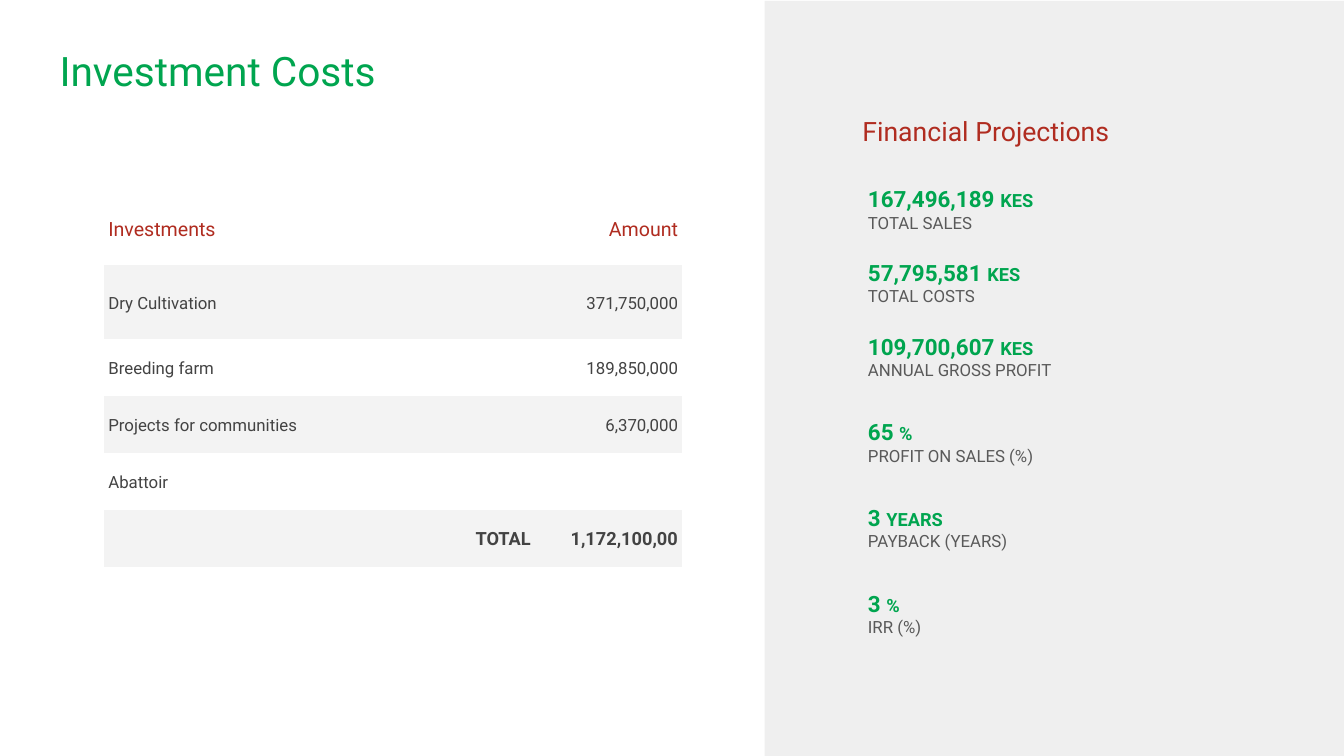
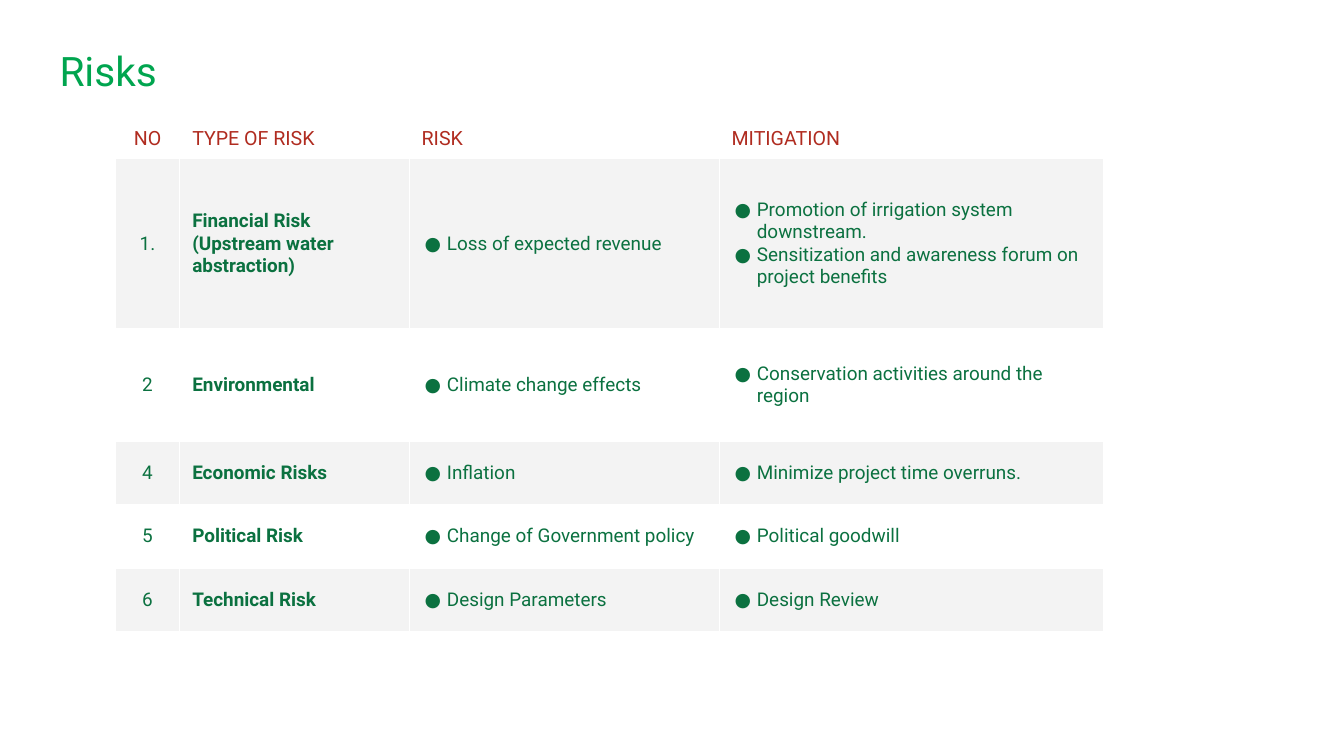
from lxml.etree import SubElement
from pptx import Presentation
from pptx.dml.color import RGBColor
from pptx.enum.shapes import MSO_SHAPE as Preset
from pptx.enum.text import MSO_ANCHOR as Anchor, MSO_AUTO_SIZE as AutoSize, PP_ALIGN as Align
from pptx.oxml.ns import qn
from pptx.util import Cm, Pt

FONT = "Roboto"
GREEN = RGBColor(0x00, 0xA5, 0x4F)
DARK_GREEN = RGBColor(0x0B, 0x71, 0x40)
RED = RGBColor(0xB0, 0x2C, 0x20)
INK = RGBColor(0x43, 0x43, 0x43)
CAPTION = RGBColor(0x59, 0x59, 0x59)
PANEL = RGBColor(0x9E, 0x9E, 0x9E)
BAND = RGBColor(0xF3, 0xF3, 0xF3)
WHITE = RGBColor(0xFF, 0xFF, 0xFF)

PLAIN_TABLE = "{2D5ABB26-0587-4C30-8999-92F81FD0307C}"
TITLE_ONLY = 5


class Deck:
    """Holds the shared style and the slide being built."""

    def __init__(self):
        self.prs = Presentation()
        self.prs.slide_width, self.prs.slide_height = Cm(67.73), Cm(38.1)
        self.slide = None

    def new_slide(self, heading):
        self.slide = self.prs.slides.add_slide(self.prs.slide_layouts[TITLE_ONLY])
        title = self.slide.shapes.title
        title.left, title.top, title.width, title.height = Cm(2.31), Cm(1.6), Cm(63.12), Cm(4.24)
        frame = self.frame(title, 0.69, 0.69)
        frame.paragraphs[0].alignment = Align.LEFT
        self.run(frame.paragraphs[0], heading, 58, GREEN)

    def frame(self, box, inset_x, inset_y):
        frame = box.text_frame
        frame.word_wrap = True
        frame.auto_size = AutoSize.NONE
        frame.vertical_anchor = Anchor.TOP
        frame.margin_left = frame.margin_right = Cm(inset_x)
        frame.margin_top = frame.margin_bottom = Cm(inset_y)
        return frame

    def run(self, paragraph, text, size, color, bold=False):
        run = paragraph.add_run()
        run.text = text
        font = run.font
        font.name, font.size, font.bold = FONT, Pt(size), bold
        font.color.rgb = color

    def text(self, left, top, width, height, lines, inset_y, spacing=None):
        """Each line is a list of (text, size, color, bold) runs."""
        box = self.slide.shapes.add_textbox(Cm(left), Cm(top), Cm(width), Cm(height))
        frame = self.frame(box, 0.69, inset_y)
        for i, runs in enumerate(lines):
            paragraph = frame.add_paragraph() if i else frame.paragraphs[0]
            if spacing:
                paragraph.line_spacing = spacing
            for run in runs:
                self.run(paragraph, *run)

    def panel(self, left, top, width, height, color, opacity):
        panel = self.slide.shapes.add_shape(
            Preset.RECTANGLE, Cm(left), Cm(top), Cm(width), Cm(height))
        panel.shadow.inherit = False
        panel.fill.solid()
        panel.fill.fore_color.rgb = color
        panel.line.fill.background()
        tint = panel._element.spPr.find(qn("a:solidFill"))[0]
        SubElement(tint, qn("a:alpha"), val=str(opacity * 1000))

    def table(self, left, top, widths, heights):
        table = self.slide.shapes.add_table(
            len(heights), len(widths), Cm(left), Cm(top),
            Cm(sum(widths)), Cm(sum(heights))).table
        table.first_row = table.horz_banding = False
        table._tbl.tblPr.find(qn("a:tableStyleId")).text = PLAIN_TABLE
        for column, width in zip(table.columns, widths):
            column.width = Cm(width)
        for row, height in zip(table.rows, heights):
            row.height = Cm(height)
        return table

    def cell(self, cell, lines, size, color, fill, inset, bold=False,
             align=Align.LEFT, spacing=None, bullets=False):
        cell.vertical_anchor = Anchor.MIDDLE
        cell.margin_left = cell.margin_right = Cm(inset[0])
        cell.margin_top = cell.margin_bottom = Cm(inset[1])
        cell.fill.solid()
        cell.fill.fore_color.rgb = fill
        for i, line in enumerate(lines):
            frame = cell.text_frame
            paragraph = frame.add_paragraph() if i else frame.paragraphs[0]
            paragraph.alignment = align
            if spacing:
                paragraph.line_spacing = spacing
            if bullets:
                self.bullet(paragraph, color)
            self.run(paragraph, line, size, color, bold)

    def bullet(self, paragraph, color):
        props = paragraph._p.get_or_add_pPr()
        props.set("marL", str(Cm(1.27)))
        props.set("indent", str(-Cm(1.12)))
        tint = SubElement(props, qn("a:buClr"))
        SubElement(tint, qn("a:srgbClr"), val=str(color))
        SubElement(props, qn("a:buFont"), typeface=FONT)
        SubElement(props, qn("a:buChar"), char="●")

    def borders(self, cell, color, bottom=1):
        props = cell._tc.get_or_add_tcPr()
        for side, width in (("lnL", 1), ("lnR", 1), ("lnT", 1), ("lnB", bottom)):
            line = SubElement(props, qn(f"a:{side}"), w=str(Pt(width)))
            fill = SubElement(line, qn("a:solidFill"))
            SubElement(fill, qn("a:srgbClr"), val=str(color))


def investment_costs(deck):
    deck.new_slide("Investment Costs")
    deck.panel(38.53, 0.05, 29.2, 38.05, PANEL, 16)

    # Cost table
    costs = [
        ("Investments", "Amount"),
        ("Dry Cultivation", "371,750,000"),
        ("Breeding farm", "189,850,000"),
        ("Projects for communities", "6,370,000"),
        ("Abattoir", ""),
        ("TOTAL", "1,172,100,00"),
    ]
    total = len(costs) - 1
    table = deck.table(5.26, 9.65, [21.69, 7.42], [3.71] * 2 + [2.87] * 4)
    for r, entry in enumerate(costs):
        size, color = (28, RED) if r == 0 else (26 if r == total else 24, INK)
        for c, value in enumerate(entry):
            deck.cell(table.cell(r, c), [value] if value else [], size, color,
                      BAND if r % 2 else WHITE, (0.2, 0.15), bold=r == total,
                      align=Align.RIGHT if c or r == total else Align.LEFT,
                      spacing=1.15)

    # Financial projections
    deck.text(42.77, 4.88, 21.06, 3, [[("Financial Projections", 38, RED)]], 0.69, 1.15)
    projections = [
        ("167,496,189", "KES", "TOTAL SALES", 2.95),
        ("57,795,581", "KES", "TOTAL COSTS", 2.95),
        ("109,700,607", "KES", "ANNUAL GROSS PROFIT", 3.56),
        ("65", "%", "PROFIT ON SALES (%)", 3.56),
        ("3", "YEARS", "PAYBACK (YEARS)", 3.56),
        ("3", "%", "IRR (%)", 3.56),
    ]
    top, gap = 9.02, 0.76
    for figure, unit, caption, height in projections:
        deck.text(43.05, top, 13.13, height, [
            [(figure + " ", 32, GREEN, True), (unit, 26, GREEN, True)],
            [(caption, 24, CAPTION)],
        ], 0.33)
        top += height + gap


def risks(deck):
    deck.new_slide("Risks")

    # Risk register: number, type, risk, mitigations
    register = [
        ("NO", "TYPE OF RISK", "RISK", ["MITIGATION"]),
        ("1.", "Financial Risk (Upstream water abstraction)", "Loss of expected revenue",
         ["Promotion of irrigation system downstream.",
          "Sensitization and awareness forum on project benefits"]),
        ("2", "Environmental", "Climate change effects",
         ["Conservation activities around the region"]),
        ("4", "Economic Risks", "Inflation", ["Minimize project time overruns."]),
        ("5", "Political Risk", "Change of Government policy", ["Political goodwill"]),
        ("6", "Technical Risk", "Design Parameters", ["Design Review"]),
    ]
    table = deck.table(5.82, 6.02, [3.23, 11.56, 15.62, 19.38],
                       [1.96, 8.59, 5.66] + [3.2] * 3)
    for r, (number, kind, risk, mitigations) in enumerate(register):
        header = r == 0
        size, color = (28, RED) if header else (27, DARK_GREEN)
        for c, lines in enumerate(([number], [kind], [risk], mitigations)):
            cell = table.cell(r, c)
            deck.borders(cell, WHITE, bottom=3 if header else 1)
            deck.cell(cell, lines, size, color, BAND if r % 2 else WHITE, (0.64, 0.25),
                      bold=c == 1 and not header,
                      align=Align.LEFT if c else Align.CENTER,
                      bullets=c > 1 and not header)


def main():
    deck = Deck()
    investment_costs(deck)
    risks(deck)
    deck.prs.save("out.pptx")


if __name__ == "__main__":
    main()
